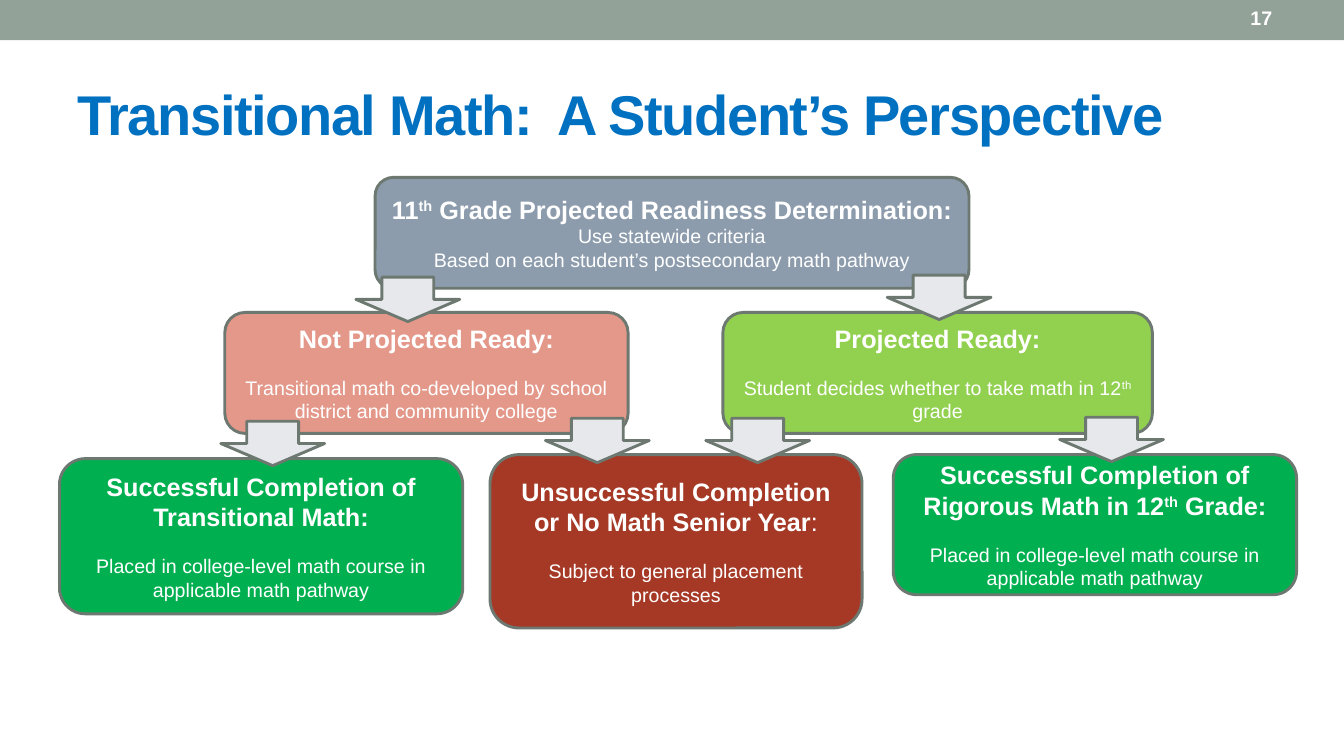
from dataclasses import dataclass
from pptx import Presentation
from pptx.dml.color import RGBColor as RGB
from pptx.enum.shapes import MSO_SHAPE as SHAPE
from pptx.enum.text import MSO_ANCHOR as ANCHOR, PP_ALIGN as ALIGN
from pptx.util import Inches, Pt


@dataclass(frozen=True)
class Theme:
    """Colours, font and type sizes of the slide."""
    font: str = "Arial"
    band: str = "93A299"
    title: str = "0070C0"
    text: str = "FFFFFF"
    edge: str = "6D7871"
    arrow: str = "E6E8EC"
    slate: str = "8C9CAD"
    rose: str = "E4988A"
    lime: str = "92D050"
    green: str = "00B050"
    red: str = "A53926"
    big: int = 40
    head: int = 18
    small: int = 14
    rule: float = 2.08


THEME = Theme()
PLACED = [("Placed in college-level math course in applicable math pathway", "")]

STEPS = [
    ((3.13, 0, 5.89, 1.1), THEME.slate, 0,
     [("11", "b"), ("th", "bs"), (" Grade Projected Readiness Determination:", "b")],
     [[("Use statewide criteria", "")],
      [("Based on each student’s postsecondary math pathway", "")]]),
    ((1.64, 1.34, 4, 1.2), THEME.rose, 16,
     [("Not Projected Ready:", "b")],
     [[("Transitional math co-developed by school district and community college", "")]]),
    ((6.58, 1.34, 4.26, 1.2), THEME.lime, 16,
     [("Projected Ready:", "b")],
     [[("Student decides whether to take math in 12", ""), ("th", "s"), (" grade", "")]]),
    ((0, 2.79, 4, 1.54), THEME.green, 16,
     [("Successful Completion of Transitional Math:", "b")],
     [PLACED]),
    ((4.27, 2.75, 3.69, 1.72), THEME.red, 16,
     [("Unsuccessful Completion or No Math Senior Year", "b"), (":", "")],
     [[("Subject to general placement processes", "")]]),
    ((8.27, 2.75, 4, 1.39), THEME.green, 16,
     [("Successful Completion of Rigorous Math in 12", "b"), ("th", "bs"), (" Grade:", "b")],
     [PLACED]),
]
ARROWS = [(2.94, 0.99), (8.21, 0.97), (1.6, 2.42), (4.82, 2.39), (6.41, 2.39), (9.92, 2.38)]


def add_run(para, text, size, color, flags=""):
    """Add one run; flag b is bold and s is superscript."""
    run = para.add_run()
    run.text = text
    font = run.font
    font.name, font.size, font.bold = THEME.font, Pt(size), "b" in flags
    font.color.rgb = RGB.from_string(color)
    if "s" in flags:
        run._r.get_or_add_rPr().set("baseline", "30000")
    return run


def add_form(slide, kind, box, fill, edge=None):
    """Add a flat filled shape in the given box."""
    form = slide.shapes.add_shape(kind, *map(Inches, box))
    form.shadow.inherit = False
    form.fill.solid()
    form.fill.fore_color.rgb = RGB.from_string(fill)
    if edge:
        form.line.color.rgb = RGB.from_string(edge)
        form.line.width = Pt(THEME.rule)
    else:
        form.line.fill.background()
    return form


def add_band(slide, box, number):
    """Draw the top band with the page number near its right end."""
    left, top, width, height = box
    add_form(slide, SHAPE.RECTANGLE, box, THEME.band)
    place = left + width - 1.6, top, 1.56, height - 0.04
    frame = slide.shapes.add_textbox(*map(Inches, place)).text_frame
    frame.word_wrap = True
    frame.vertical_anchor = ANCHOR.MIDDLE
    para = frame.paragraphs[0]
    para.alignment = ALIGN.CENTER
    add_run(para, number, THEME.small, THEME.text, "b")


def add_title(slide, box, text):
    """Fill the title placeholder and move it to the box."""
    title = slide.shapes.title
    title.left, title.top, title.width, title.height = map(Inches, box)
    frame = title.text_frame
    frame.word_wrap = True
    frame.vertical_anchor = ANCHOR.MIDDLE
    para = frame.paragraphs[0]
    para.alignment = ALIGN.LEFT
    run = add_run(para, text, THEME.big, THEME.title, "b")
    run._r.get_or_add_rPr().set("spc", "-100")


def add_step(slide, box, fill, gap, head, notes):
    """Draw one rounded step with a heading and its notes."""
    form = add_form(slide, SHAPE.ROUNDED_RECTANGLE, box, fill, THEME.edge)
    frame = form.text_frame
    frame.word_wrap = True
    frame.vertical_anchor = ANCHOR.MIDDLE
    for row, parts in enumerate([head, *notes]):
        para = frame.add_paragraph() if row else frame.paragraphs[0]
        para.alignment = ALIGN.CENTER
        if row == 1:
            para.space_before = Pt(gap)
        for text, flags in parts:
            add_run(para, text, THEME.small if row else THEME.head, THEME.text, flags)


def add_flow(slide, box):
    """Draw the steps and the arrows between them from the box corner."""
    left, top = box[:2]
    for (x, y, width, height), *rest in STEPS:
        add_step(slide, (left + x, top + y, width, height), *rest)
    for x, y in ARROWS:
        place = left + x, top + y, 1.03, 0.44
        add_form(slide, SHAPE.DOWN_ARROW, place, THEME.arrow, THEME.edge)


def main():
    """Build the slide and save it."""
    deck = Presentation()
    deck.slide_width, deck.slide_height = Inches(13.33), Inches(7.5)
    slide = deck.slides.add_slide(deck.slide_layouts[5])
    add_band(slide, (0, 0, 13.33, 0.4), "17")
    add_title(slide, (0.67, 0.58, 12, 1.08), "Transitional Math:  A Student’s Perspective")
    add_flow(slide, (0.59, 1.76, 12.27, 4.47))
    deck.save("out.pptx")


if __name__ == "__main__":
    main()
